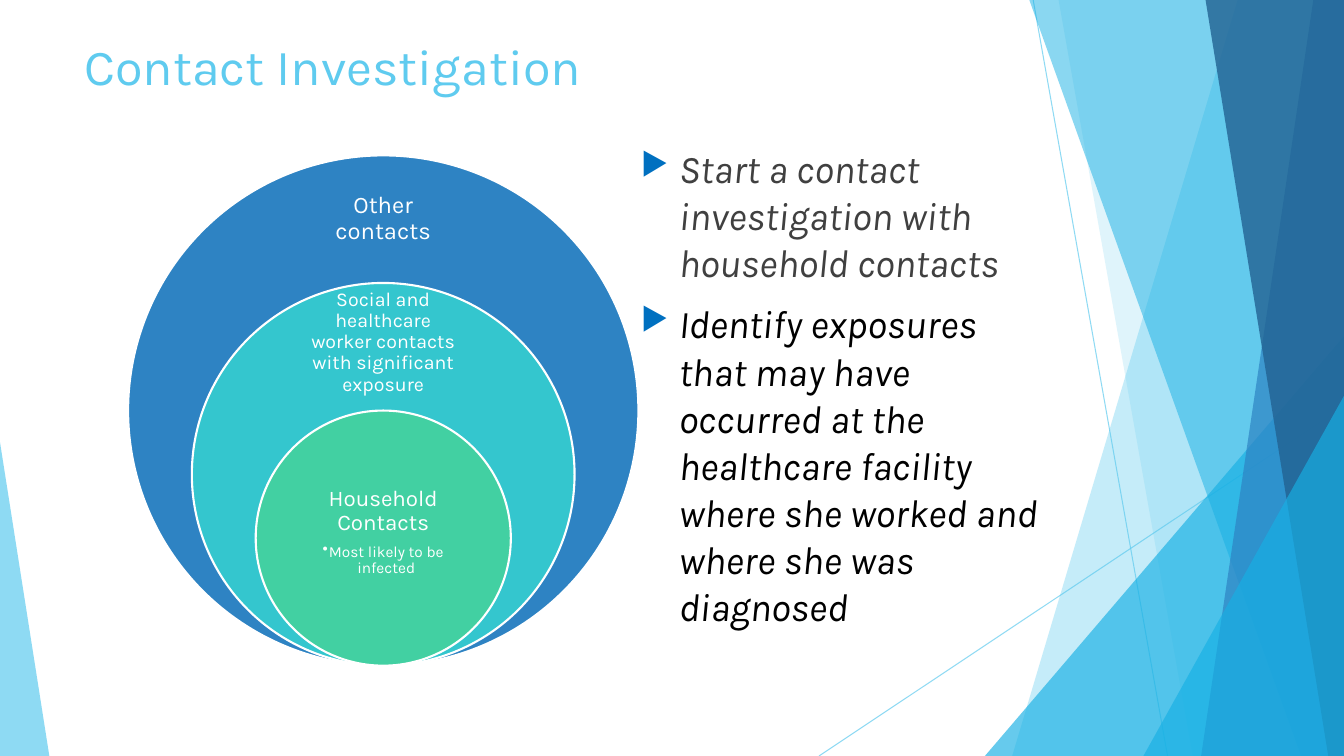
from collections import namedtuple

from lxml.etree import SubElement
from pptx import Presentation
from pptx.dml.color import RGBColor
from pptx.enum.shapes import MSO_CONNECTOR, MSO_SHAPE
from pptx.enum.text import MSO_ANCHOR, PP_ALIGN
from pptx.oxml.ns import qn
from pptx.util import Pt

PX = 9525
FONT = "Karla"
WHITE = RGBColor(0xFF, 0xFF, 0xFF)
BLACK = RGBColor(0x00, 0x00, 0x00)
GRAY = RGBColor(0x40, 0x40, 0x40)
SKY = RGBColor(0x5F, 0xCB, 0xEF)
CYAN = RGBColor(0x17, 0xB0, 0xE4)
BLUE = RGBColor(0x2E, 0x83, 0xC3)
NAVY = RGBColor(0x22, 0x62, 0x92)
TEAL = RGBColor(0x34, 0xC6, 0xCE)
GREEN = RGBColor(0x42, 0xD0, 0xA2)
BULLET_BLUE = RGBColor(0x00, 0x70, 0xC0)

Box = namedtuple("Box", "left top width height")


def emu(*lengths):
    """Turn pixel lengths into EMU."""
    return [round(length * PX) for length in lengths]


def set_opacity(shape, percent):
    """Give every colour of a shape the same opacity."""
    for color in shape.element.xpath(".//a:srgbClr"):
        SubElement(color, qn("a:alpha"), val=str(percent * 1000))


def paint(shape, color, opacity=100):
    """Fill a shape without line or shadow."""
    shape.shadow.inherit = False
    shape.fill.solid()
    shape.fill.fore_color.rgb = color
    shape.line.fill.background()
    if opacity < 100:
        set_opacity(shape, opacity)


def style_runs(para, size, color, italic=False):
    """Format all runs of a paragraph."""
    for span in para.runs:
        span.font.name = FONT
        span.font.size = Pt(size)
        span.font.color.rgb = color
        span.font.italic = italic


def add_bullet(para, character, indent, color=None, size=100):
    """Give a paragraph a hanging bullet."""
    margin, = emu(indent)
    properties = para._p.get_or_add_pPr()
    properties.set("marL", str(margin))
    properties.set("indent", str(-margin))
    if color is not None:
        SubElement(SubElement(properties, qn("a:buClr")), qn("a:srgbClr"), val=str(color))
    SubElement(properties, qn("a:buSzPct"), val=str(size * 1000))
    SubElement(properties, qn("a:buChar"), char=character)


def add_text_frame(page, box):
    """Add a wrapping text box and return its frame."""
    frame = page.shapes.add_textbox(*emu(*box)).text_frame
    frame.word_wrap = True
    return frame


def add_ray(page, box, start, end):
    """Draw one thin translucent line."""
    ray = page.shapes.add_connector(
        MSO_CONNECTOR.STRAIGHT,
        *emu(box.left + start[0], box.top + start[1], box.left + end[0], box.top + end[1]))
    ray.line.color.rgb = SKY
    ray.line.width = Pt(0.75)
    set_opacity(ray, 70)
    SubElement(ray.element.spPr, qn("a:effectLst"))


def add_facet(page, box, top_left, bottom_left, color, opacity):
    """Draw a translucent panel that reaches the right edge of the box."""
    right, bottom = box.left + box.width, box.top + box.height
    builder = page.shapes.build_freeform(box.left + top_left, box.top - 1, PX)
    builder.add_line_segments(
        [(right, box.top - 1), (right, bottom), (box.left + bottom_left, bottom)])
    paint(builder.convert_to_shape(), color, opacity)


def add_corner(page, box, width, height, apex, color, opacity):
    """Draw a right triangle in a bottom corner, its apex at 0 (left) or 1 (right)."""
    left = box.left + apex * (box.width - width)
    corner = page.shapes.add_shape(
        MSO_SHAPE.ISOSCELES_TRIANGLE,
        *emu(left, box.top + box.height - height, width, height))
    corner.adjustments[0] = apex
    paint(corner, color, opacity)


def add_backdrop(page, box):
    """Draw the layered panels on both sides of the slide."""
    add_ray(page, box, (984, 0), (1112, 720))
    add_ray(page, box, (1280, 387), (780, 720))
    add_facet(page, box, 1179, 964, SKY, 36)
    add_facet(page, box, 1008, 1136, SKY, 20)
    add_corner(page, box, 342, 400, 1, CYAN, 66)
    add_facet(page, box, 980, 1239, CYAN, 50)
    add_facet(page, box, 1251, 1144, BLUE, 70)
    add_facet(page, box, 1148, 1265, NAVY, 80)
    add_corner(page, box, 191, 343, 1, CYAN, 66)
    add_corner(page, box, 47, 299, 0, SKY, 70)


def add_title(page, box):
    """Write the slide title."""
    para = add_text_frame(page, box).paragraphs[0]
    para.text = "Contact Investigation"
    style_runs(para, 36, SKY)


def add_circle_label(page, box, text, size, inset, anchor):
    """Write a centred label and return its frame."""
    frame = add_text_frame(page, box)
    frame.vertical_anchor = anchor
    frame.margin_left, frame.margin_top, frame.margin_right, frame.margin_bottom = emu(*[inset] * 4)
    frame.text = text
    para = frame.paragraphs[0]
    para.alignment = PP_ALIGN.CENTER
    para.line_spacing = 0.9
    para.space_after = Pt(round(size * 0.35))
    style_runs(para, size, WHITE)
    return frame


def add_contact_circles(page, box):
    """Draw nested circles that share their lowest point."""
    circles = [
        (BLUE, "Other contacts", 17, 12, 24, 73, MSO_ANCHOR.MIDDLE),
        (TEAL, "Social and healthcare worker contacts with significant exposure",
         14, 11, 144, 68, MSO_ANCHOR.MIDDLE),
        (GREEN, "Household Contacts", 16, 12, 304, 122, MSO_ANCHOR.TOP),
    ]
    label_width = 171
    label_left = box.left + (box.width - label_width) / 2
    for index, (color, text, size, inset, top, height, anchor) in enumerate(circles):
        diameter = box.width * (4 - index) / 4
        circle = page.shapes.add_shape(
            MSO_SHAPE.OVAL,
            *emu(box.left + (box.width - diameter) / 2,
                 box.top + box.height - diameter, diameter, diameter))
        paint(circle, color)
        circle.line.color.rgb = WHITE
        circle.line.width = Pt(1.5)
        label = Box(label_left, box.top + top, label_width, height)
        frame = add_circle_label(page, label, text, size, inset, anchor)

    detail = frame.add_paragraph()
    detail.text = "Most likely to be infected"
    detail.level = 1
    detail.alignment = PP_ALIGN.CENTER
    detail.line_spacing = 0.9
    detail.space_after = Pt(2)
    style_runs(detail, 11, WHITE)
    add_bullet(detail, "•", 6)


def add_steps(page, box):
    """Write the bulleted steps of the investigation."""
    steps = [
        ("Start a contact investigation with household contacts", GRAY),
        ("Identify exposures that may have occurred at the healthcare facility "
         "where she worked and where she was diagnosed", BLACK),
    ]
    frame = add_text_frame(page, box)
    frame.text = "\n".join(text for text, _ in steps)
    for para, (_, color) in zip(frame.paragraphs, steps):
        para.space_before = Pt(10)
        style_runs(para, 28, color, italic=True)
        add_bullet(para, "▶", 36, BULLET_BLUE, 80)


def main():
    """Build and save the slide."""
    deck = Presentation()
    deck.slide_width, deck.slide_height = emu(1280, 720)
    page = deck.slides.add_slide(deck.slide_layouts[6])
    add_backdrop(page, Box(0, 0, 1280, 720))
    add_title(page, Box(71, 29, 902, 95))
    add_contact_circles(page, Box(122, 148, 486, 486))
    add_steps(page, Box(601, 133, 409, 485))
    deck.save("out.pptx")


if __name__ == "__main__":
    main()
